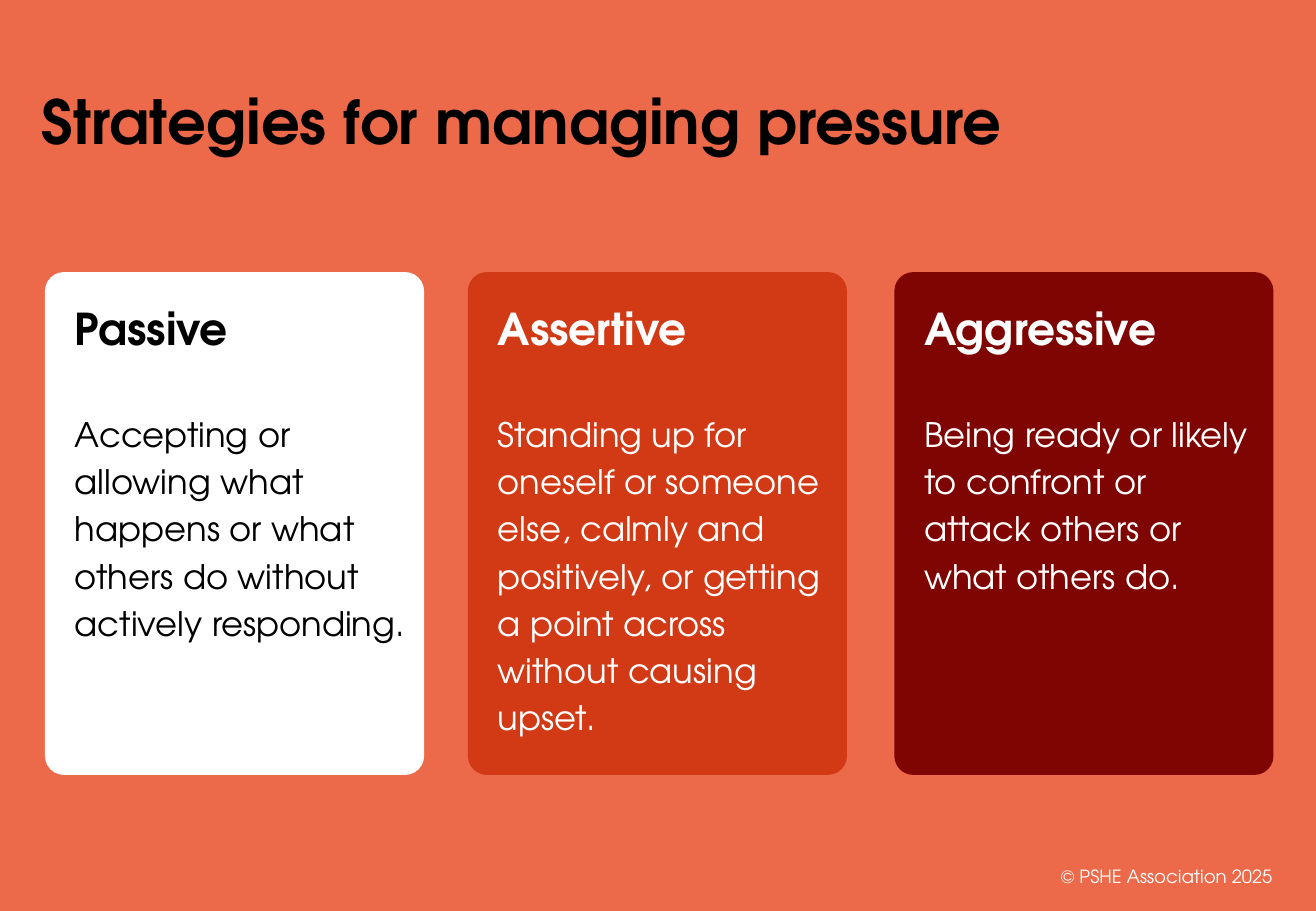
from dataclasses import dataclass

import pptx
import pptx.dml.color
import pptx.enum.shapes
import pptx.enum.text
import pptx.util

Inches = pptx.util.Inches
Pt = pptx.util.Pt
RGBColor = pptx.dml.color.RGBColor
PP_ALIGN = pptx.enum.text.PP_ALIGN
MSO_ANCHOR = pptx.enum.text.MSO_ANCHOR


@dataclass(frozen=True)
class Theme:
    font: str = "TeX Gyre Adventor"
    background: RGBColor = RGBColor(0xEC, 0x69, 0x4A)
    black: RGBColor = RGBColor(0, 0, 0)
    white: RGBColor = RGBColor(0xFF, 0xFF, 0xFF)
    orange: RGBColor = RGBColor(0xD2, 0x3A, 0x16)
    maroon: RGBColor = RGBColor(0x7F, 0x05, 0x03)
    title_size: Pt = Pt(36)
    heading_size: Pt = Pt(26)
    body_size: Pt = Pt(20)
    footer_size: Pt = Pt(10.8)


THEME = Theme()

# Left edge in inches, fill, text colour, heading, description
CARDS = [
    (0.37, THEME.white, THEME.black, "Passive",
     "Accepting or allowing what happens or what others do without "
     "actively responding."),
    (3.85, THEME.orange, THEME.white, "Assertive",
     "Standing up for oneself or someone else, calmly and positively, "
     "or getting a point across without causing upset."),
    (7.36, THEME.maroon, THEME.white, "Aggressive",
     "Being ready or likely to confront or attack others or what others do."),
]


def set_attributes(target, **values):
    for name, value in values.items():
        setattr(target, name, value)


def write_paragraph(paragraph, text, size, color, bold=False, **layout):
    paragraph.text = text
    set_attributes(paragraph, **{"alignment": PP_ALIGN.LEFT, **layout})
    font = paragraph.runs[0].font
    set_attributes(font, name=THEME.font, size=size, bold=bold)
    font.color.rgb = color


def add_text(slide, box, anchor, *content, **layout):
    """Add a one-paragraph text box; box is left, top, width, height in inches."""
    frame = slide.shapes.add_textbox(*map(Inches, box)).text_frame
    set_attributes(frame, word_wrap=True, vertical_anchor=anchor)
    write_paragraph(frame.paragraphs[0], *content, **layout)


def add_card(slide, left, fill, color, heading, description):
    card = slide.shapes.add_shape(
        pptx.enum.shapes.MSO_SHAPE.ROUNDED_RECTANGLE,
        Inches(left), Inches(2.24), Inches(3.12), Inches(4.14))
    card.adjustments[0] = 0.05
    card.shadow.inherit = False
    card.fill.solid()
    card.fill.fore_color.rgb = fill
    card.line.fill.background()

    frame = card.text_frame
    set_attributes(
        frame, word_wrap=True, vertical_anchor=MSO_ANCHOR.TOP,
        margin_left=Inches(0.2), margin_top=Inches(0.2),
        margin_right=Inches(0.1), margin_bottom=Inches(0.05))
    write_paragraph(frame.paragraphs[0], heading, THEME.heading_size, color,
                    bold=True, space_after=Pt(31))
    write_paragraph(frame.add_paragraph(), description, THEME.body_size, color,
                    line_spacing=Pt(28))


def main():
    presentation = pptx.Presentation()
    set_attributes(presentation, slide_width=Inches(10.83),
                   slide_height=Inches(7.5))
    slide = presentation.slides.add_slide(presentation.slide_layouts[6])
    slide.background.fill.solid()
    slide.background.fill.fore_color.rgb = THEME.background

    add_text(slide, (0.24, 0.58, 8.25, 0.76), MSO_ANCHOR.BOTTOM,
             "Strategies for managing pressure", THEME.title_size, THEME.black,
             bold=True, line_spacing=Pt(43))
    for card in CARDS:
        add_card(slide, *card)
    add_text(slide, (8.13, 7.01, 2.44, 0.4), MSO_ANCHOR.MIDDLE,
             "© PSHE Association 2025", THEME.footer_size, THEME.white,
             alignment=PP_ALIGN.RIGHT)

    presentation.save("out.pptx")


if __name__ == "__main__":
    main()
